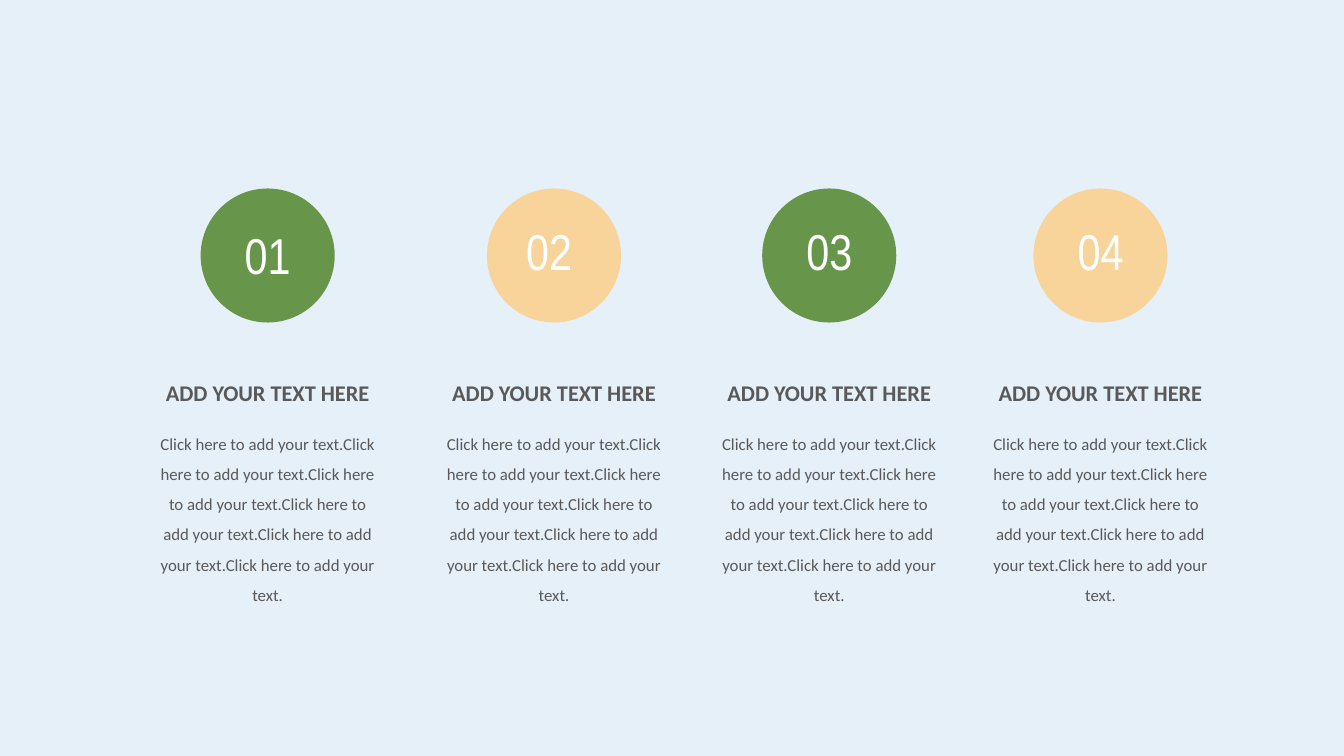
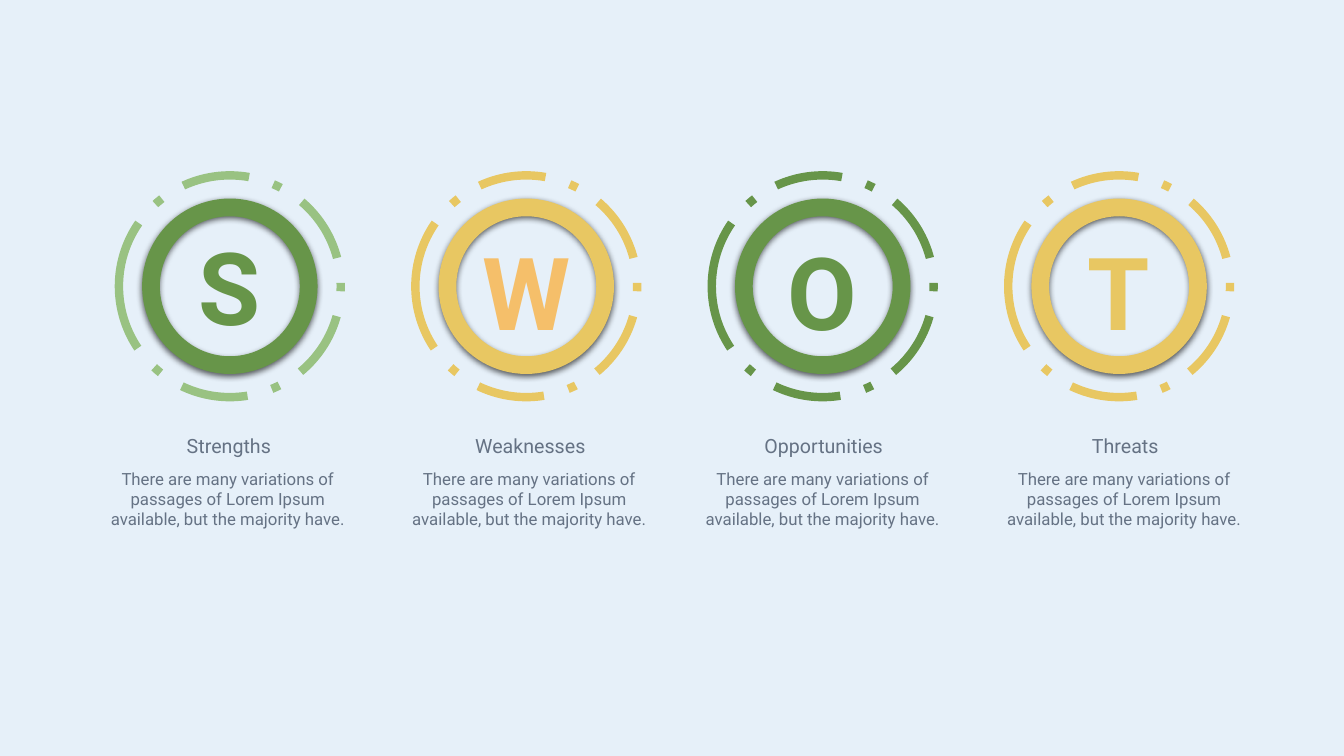
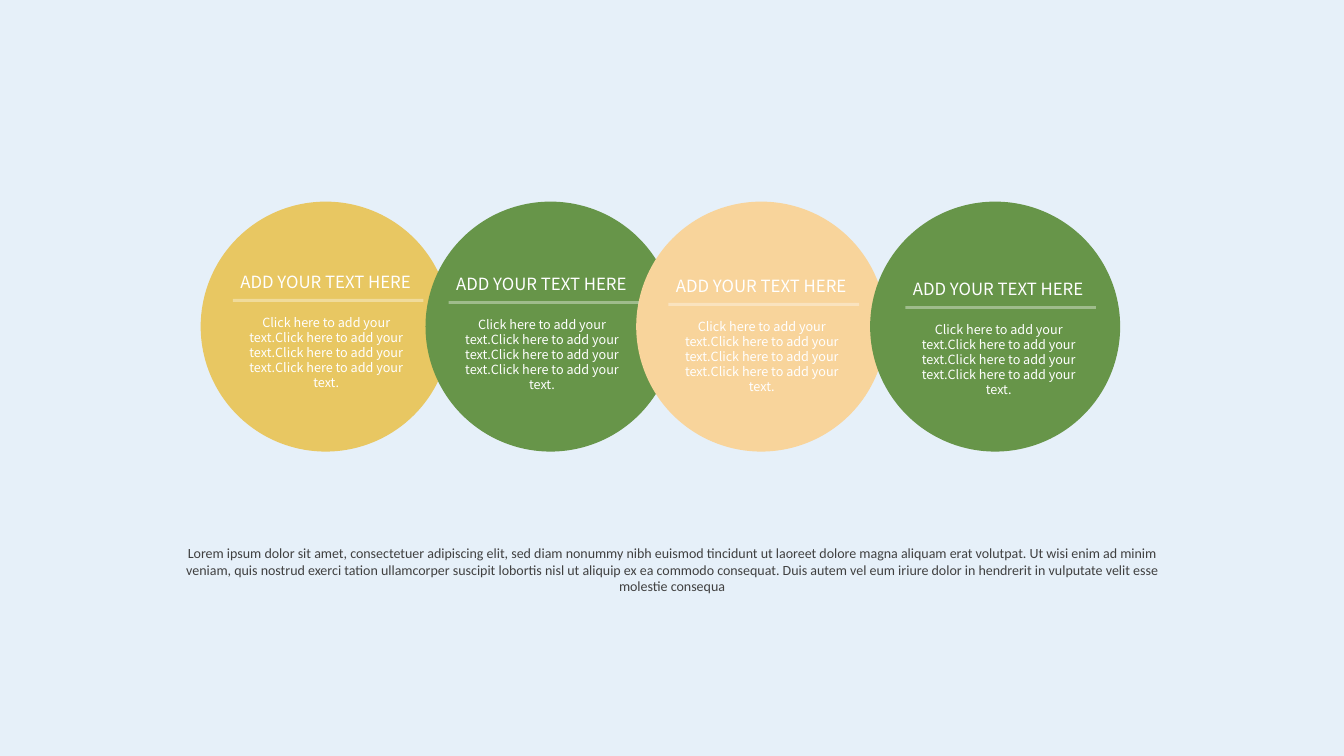
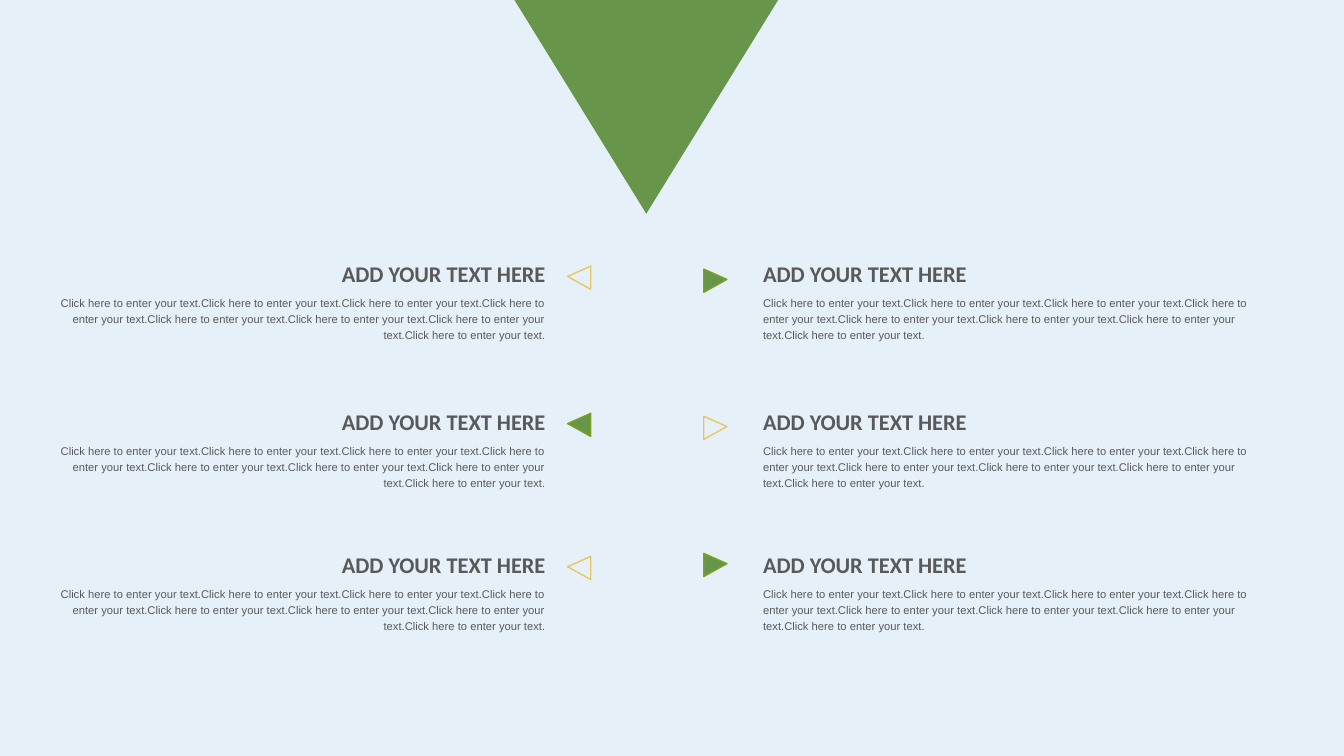
from lxml import etree
from pptx import Presentation
from pptx.dml.color import RGBColor
from pptx.enum import dml, shapes, text
from pptx.oxml.ns import qn
from pptx.util import Inches, Pt

COLORS = {
    "background": "E6F0F9",
    "green": "679549",
    "light_green": "99C282",
    "edge_green": "7EA122",
    "peach": "F8D49B",
    "orange": "F5BF6A",
    "gold": "E8C762",
    "white": "FFFFFF",
    "gray": "595959",
    "dark_gray": "404040",
    "slate": "657284",
    "black": "000000",
}
HEADING = "ADD YOUR TEXT HERE"
ADD_TEXT = "Click here to add your text."
ENTER_TEXT = "Click here to enter your text."
LOREM = (
    "Lorem ipsum dolor sit amet, consectetuer adipiscing elit, sed diam nonummy nibh "
    "euismod tincidunt ut laoreet dolore magna aliquam erat volutpat. Ut wisi enim ad minim "
    "veniam, quis nostrud exerci tation ullamcorper suscipit lobortis nisl ut aliquip ex ea "
    "commodo consequat. Duis autem vel eum iriure dolor in hendrerit in vulputate velit esse "
    "molestie consequa"
)
SWOT_TEXT = (
    "There are many variations of passages of Lorem Ipsum available, "
    "but the majority have."
)
SHAPE = shapes.MSO_SHAPE
CENTER = text.PP_ALIGN.CENTER
LEFT = text.PP_ALIGN.LEFT
RIGHT = text.PP_ALIGN.RIGHT


def rgb(name):
    return RGBColor.from_string(COLORS[name])


def add_slide(presentation):
    slide = presentation.slides.add_slide(presentation.slide_layouts[6])
    slide.background.fill.solid()
    slide.background.fill.fore_color.rgb = rgb("background")
    return slide


def add_text(slide, box, content, font, size, color, align=CENTER, bold=False,
             wrap=True, spacing=None, before=None):
    shape = slide.shapes.add_textbox(*map(Inches, box))
    frame = shape.text_frame
    frame.word_wrap = wrap
    frame.auto_size = text.MSO_AUTO_SIZE.SHAPE_TO_FIT_TEXT
    paragraph = frame.paragraphs[0]
    paragraph.text = content
    paragraph.alignment = align
    paragraph.line_spacing = spacing
    paragraph.space_before = before
    paragraph.font.name = font
    paragraph.font.size = Pt(size)
    paragraph.font.bold = bold
    paragraph.font.color.rgb = rgb(color)


def add_heading(slide, box, align=CENTER):
    add_text(slide, box, HEADING, "Calibri", 16, "gray", align, bold=True)


def add_figure(slide, kind, box, fill=None, line=None, width=1):
    shape = slide.shapes.add_shape(kind, *map(Inches, box))
    shape.shadow.inherit = False
    if fill:
        shape.fill.solid()
        shape.fill.fore_color.rgb = rgb(fill)
    else:
        shape.fill.background()
    if line:
        shape.line.color.rgb = rgb(line)
        shape.line.width = Pt(width)
    else:
        shape.line.fill.background()
    return shape


def add_alpha(color_element, percent):
    etree.SubElement(color_element, qn("a:alpha"), val=str(percent * 1000))


def add_soft_shadow(shape):
    effects = shape._element.spPr.find(qn("a:effectLst"))
    shadow = etree.SubElement(
        effects, qn("a:outerShdw"), blurRad=str(Pt(4.5)), dist=str(Pt(1.5)),
        dir="5400000", algn="ctr", rotWithShape="0")
    color = etree.SubElement(shadow, qn("a:srgbClr"), val=COLORS["black"])
    add_alpha(color, 63)


def add_divider(slide, left, top, width):
    line = slide.shapes.add_connector(
        shapes.MSO_CONNECTOR.STRAIGHT,
        *map(Inches, (left, top, left + width, top)))
    line.line.color.rgb = rgb("white")
    line.line.width = Pt(0)
    properties = line._element.spPr
    add_alpha(next(properties.iter(qn("a:srgbClr"))), 37)
    etree.SubElement(properties, qn("a:effectLst"))


def numbered_column(slide, left, top, number, color, shift, drop):
    size = 1.33
    middle = left + size / 2
    add_figure(slide, SHAPE.OVAL, (left, top, size, size), color)
    add_text(slide, (left + 0.26 + shift, top + 0.26 + drop, 0.81, 0.75),
             number, "Arial Narrow", 36, "white")
    add_heading(slide, (middle - 1.39, top + 1.84, 2.78, 0.37))
    add_text(slide, (middle - 1.22, top + 2.28, 2.44, 1.9), ADD_TEXT * 6,
             "Calibri", 12, "gray", spacing=1.5)


def numbers_slide(presentation):
    slide = add_slide(presentation)
    columns = [
        (1.99, "green", 0, 0.04),
        (4.83, "peach", -0.05, 0),
        (7.56, "green", 0, 0),
        (10.25, "peach", 0, 0),
    ]
    for index, (left, color, shift, drop) in enumerate(columns, 1):
        numbered_column(slide, left, 1.87, f"{index:02}", color, shift, drop)


def swot_badge(slide, left, top, letter, ring_color, dash_color, letter_color, drop):
    size, ring, letter_width = 2.2, 1.74, 1.4
    inset = (size - ring) / 2
    donut = add_figure(slide, SHAPE.DONUT, (left + inset, top + inset, ring, ring),
                       ring_color)
    donut.adjustments[0] = 0.101
    add_soft_shadow(donut)
    dashes = add_figure(slide, SHAPE.OVAL, (left, top, size, size),
                        line=dash_color, width=6)
    dashes.line.dash_style = dml.MSO_LINE.LONG_DASH_DOT
    add_text(slide, (left + (size - letter_width) / 2, top + drop, letter_width, 1.31),
             letter, "Roboto", 72, letter_color, bold=True, wrap=False)


def swot_caption(slide, left, top, title):
    add_text(slide, (left + 0.4, top, 1.78, 0.34), title, "Roboto", 14, "slate")
    add_text(slide, (left, top + 0.34, 2.56, 1.23), SWOT_TEXT, "Roboto", 12, "slate")


def swot_slide(presentation):
    slide = add_slide(presentation)
    columns = [
        ("Strengths", "green", "light_green", "green", 0.44, 0.98),
        ("Weaknesses", "gold", "gold", "orange", 0.49, 3.97),
        ("Opportunities", "green", "green", "green", 0.49, 6.88),
        ("Threats", "gold", "gold", "gold", 0.49, 9.87),
    ]
    for index, (title, ring, dashes, letter, drop, caption_left) in enumerate(columns):
        swot_badge(slide, 1.18 + 2.94 * index, 1.74, title[0], ring, dashes, letter, drop)
        swot_caption(slide, caption_left, 4.26, title)


def circle_text(slide, left, top):
    font = "Noto Sans CJK SC"
    add_text(slide, (left, top, 2.78, 0.31), HEADING, font, 12, "white")
    add_text(slide, (left + 0.44, top + 0.42, 1.91, 0.86), ADD_TEXT * 4,
             font, 9, "white")
    add_divider(slide, left + 0.47, top + 0.33, 1.89)


def circles_slide(presentation):
    slide = add_slide(presentation)
    circles = [(1.99, "gold"), (4.22, "green"), (6.31, "peach"), (8.63, "green")]
    for left, color in circles:
        add_figure(slide, SHAPE.OVAL, (left, 2, 2.48, 2.48), color)
    for left, top in [(1.84, 2.65), (3.98, 2.67), (6.16, 2.69), (8.51, 2.72)]:
        circle_text(slide, left, top)
    add_text(slide, (1.71, 5.35, 9.91, 0.6), LOREM, "Calibri", 10, "dark_gray")


def add_marker(slide, left, top, rotation, apex, filled):
    fill, line = ("green", "edge_green") if filled else (None, "gold")
    marker = add_figure(slide, SHAPE.ISOSCELES_TRIANGLE, (left, top, 0.23, 0.23),
                        fill, line)
    marker.adjustments[0] = apex
    marker.rotation = rotation


def text_block(slide, edge, top, align):
    heading_width, body_width = 3.23, 5.28
    back = 1 if align == RIGHT else 0
    add_text(slide, (edge - back * body_width, top + 0.33, body_width, 0.95),
             ENTER_TEXT * 8, "Arial", 8, "gray", align, spacing=1.2, before=Pt(1.6))
    add_heading(slide, (edge - back * heading_width, top, heading_width, 0.37), align)


def triangle_slide(presentation):
    slide = add_slide(presentation)
    funnel = add_figure(slide, SHAPE.ISOSCELES_TRIANGLE, (5.09, -0.02, 2.64, 2.14),
                        "green")
    funnel.rotation = 180
    rows = [(2.53, 0.11, 0.14), (4, 0.1, 0.13), (5.42, 0.1, 0.07)]
    for index, (top, left_drop, right_drop) in enumerate(rows):
        odd = index % 2 == 1
        text_block(slide, 5.51, top, RIGHT)
        text_block(slide, 7.47, top, LEFT)
        add_marker(slide, 5.63, top + left_drop, 270, 0.556, odd)
        add_marker(slide, 6.98, top + right_drop, 90, 0.444, not odd)


def main():
    presentation = Presentation()
    presentation.slide_width = Inches(13.33)
    presentation.slide_height = Inches(7.5)
    numbers_slide(presentation)
    swot_slide(presentation)
    circles_slide(presentation)
    triangle_slide(presentation)
    presentation.save("out.pptx")


if __name__ == "__main__":
    main()
